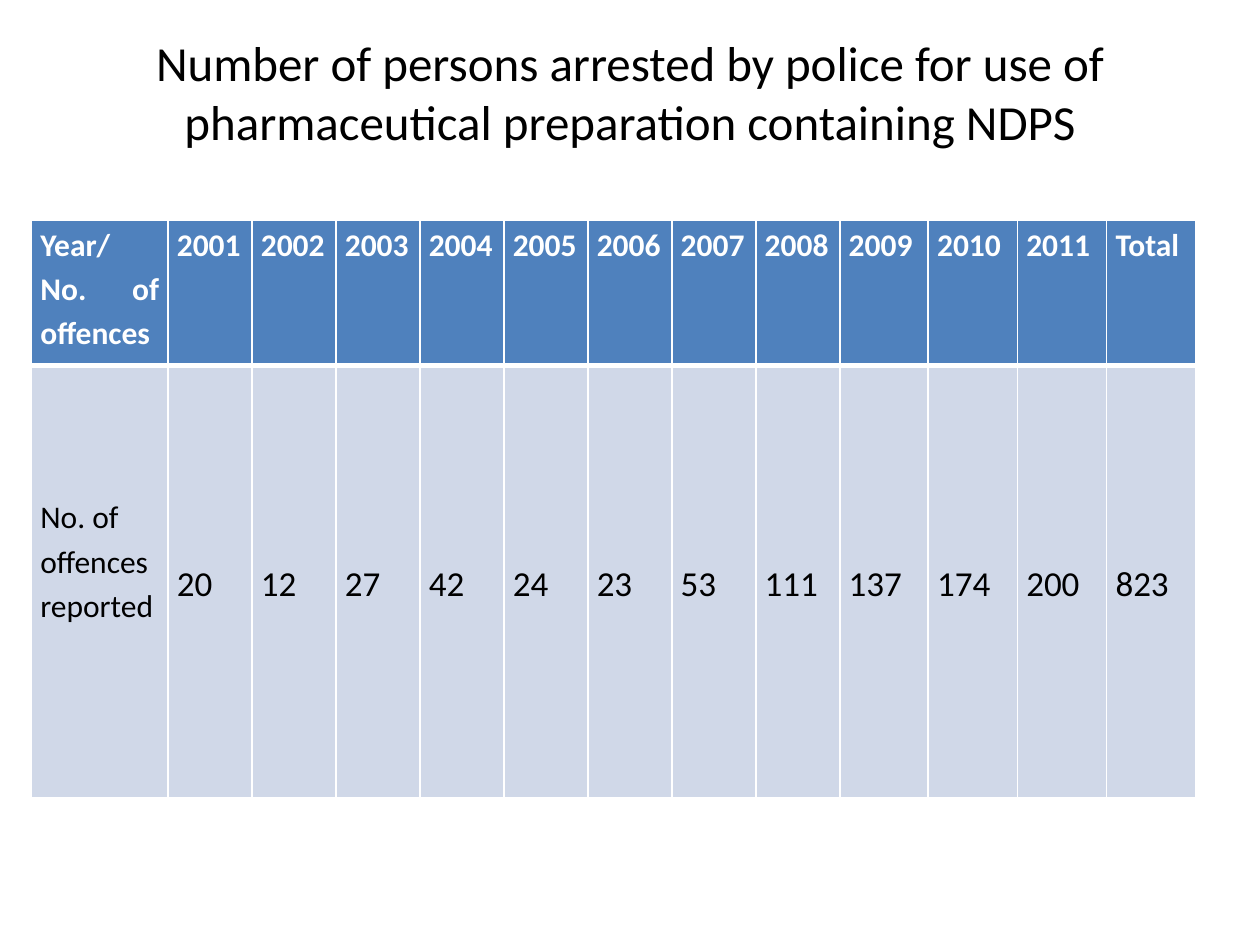
from dataclasses import dataclass

from lxml.etree import SubElement as Sub
from pptx import Presentation
from pptx.dml.color import RGBColor as Rgb
from pptx.enum.text import MSO_ANCHOR as Anchor, PP_ALIGN as Align
from pptx.oxml.ns import qn
from pptx.util import Pt


@dataclass
class Style:
    """Look of one kind of text."""
    size: float
    ink: str
    bold: bool = False
    align: Align = Align.JUSTIFY
    anchor: Anchor = Anchor.TOP
    space: float = 1.15
    top: float = 0


@dataclass
class Row:
    """One table row with its label, values and look."""
    high: float
    fill: str
    label: str
    items: list[str]
    first: Style
    rest: Style
    edges: dict[str, float]


TITLE = Style(28, "000000", align=Align.CENTER, anchor=Anchor.MIDDLE, space=1)
HEAD = Style(18, "FFFFFF", bold=True)
LABEL = Style(18, "000000", align=Align.LEFT, top=73)
VALUE = Style(20, "000000", anchor=Anchor.MIDDLE)
WIDTHS = [78] + [48] * 8 + [50.5] + [51] * 3
YEARS = [str(year) for year in range(2001, 2012)]
COUNTS = "20 12 27 42 24 23 53 111 137 174 200 823".split()
ROWS = [
    Row(82.8, "4F81BD", "Year/ No. of offences", YEARS + ["Total"],
        HEAD, HEAD, {"L": 1, "R": 1, "T": 1, "B": 3}),
    Row(247, "D0D8E8", "No. of offences reported", COUNTS,
        LABEL, VALUE, {"L": 1, "R": 1, "T": 3, "B": 1}),
]


def tint(color, code: str) -> None:
    """Set a colour from a hex string."""
    color.rgb = Rgb.from_string(code)


def write(frame, text: str, style: Style) -> None:
    """Write one styled run into a text frame."""
    para = frame.paragraphs[0]
    para.alignment, para.line_spacing = style.align, style.space
    run = para.add_run()
    run.text = text
    run.font.name, run.font.size, run.font.bold = "Calibri", Pt(style.size), style.bold
    tint(run.font.color, style.ink)


def edge(cell, side: str, wide: float) -> None:
    """Draw one white cell border."""
    line = Sub(cell._tc.get_or_add_tcPr(), qn(f"a:ln{side}"), w=str(Pt(wide)))
    Sub(Sub(line, qn("a:solidFill")), qn("a:srgbClr"), val="FFFFFF")


def fill_cell(cell, text: str, style: Style, row: Row) -> None:
    """Give a cell its margins, borders, fill and text."""
    cell.margin_left = cell.margin_right = Pt(5.1)
    cell.margin_top, cell.margin_bottom = Pt(style.top), Pt(0)
    cell.vertical_anchor = style.anchor
    for side, wide in row.edges.items():
        edge(cell, side, wide)
    cell.fill.solid()
    tint(cell.fill.fore_color, row.fill)
    write(cell.text_frame, text, style)


def add_title(slide, text: str) -> None:
    """Add the heading, set high in its box."""
    frame = slide.shapes.add_textbox(Pt(36), Pt(21.6), Pt(648), Pt(90)).text_frame
    frame.word_wrap = True
    frame.vertical_anchor = TITLE.anchor
    frame.margin_top, frame.margin_bottom = Pt(0), Pt(29)
    write(frame, text, TITLE)


def add_grid(slide, rows: list[Row]) -> None:
    """Add the table of arrests by year."""
    high = sum(row.high for row in rows)
    table = slide.shapes.add_table(len(rows), len(WIDTHS), Pt(18), Pt(126),
                                   Pt(sum(WIDTHS)), Pt(high)).table
    for col, wide in zip(table.columns, WIDTHS):
        col.width = Pt(wide)
    for line, row in zip(table.rows, rows):
        line.height = Pt(row.high)
        for i, (cell, text) in enumerate(zip(line.cells, [row.label] + row.items)):
            fill_cell(cell, text, row.rest if i else row.first, row)


def main() -> None:
    """Build and save the slide."""
    deck = Presentation()
    deck.slide_width, deck.slide_height = Pt(720), Pt(540)
    slide = deck.slides.add_slide(deck.slide_layouts[6])
    add_title(slide, "Number of persons arrested by police for use of "
                     "pharmaceutical preparation containing NDPS")
    add_grid(slide, ROWS)
    deck.save("out.pptx")


if __name__ == "__main__":
    main()
